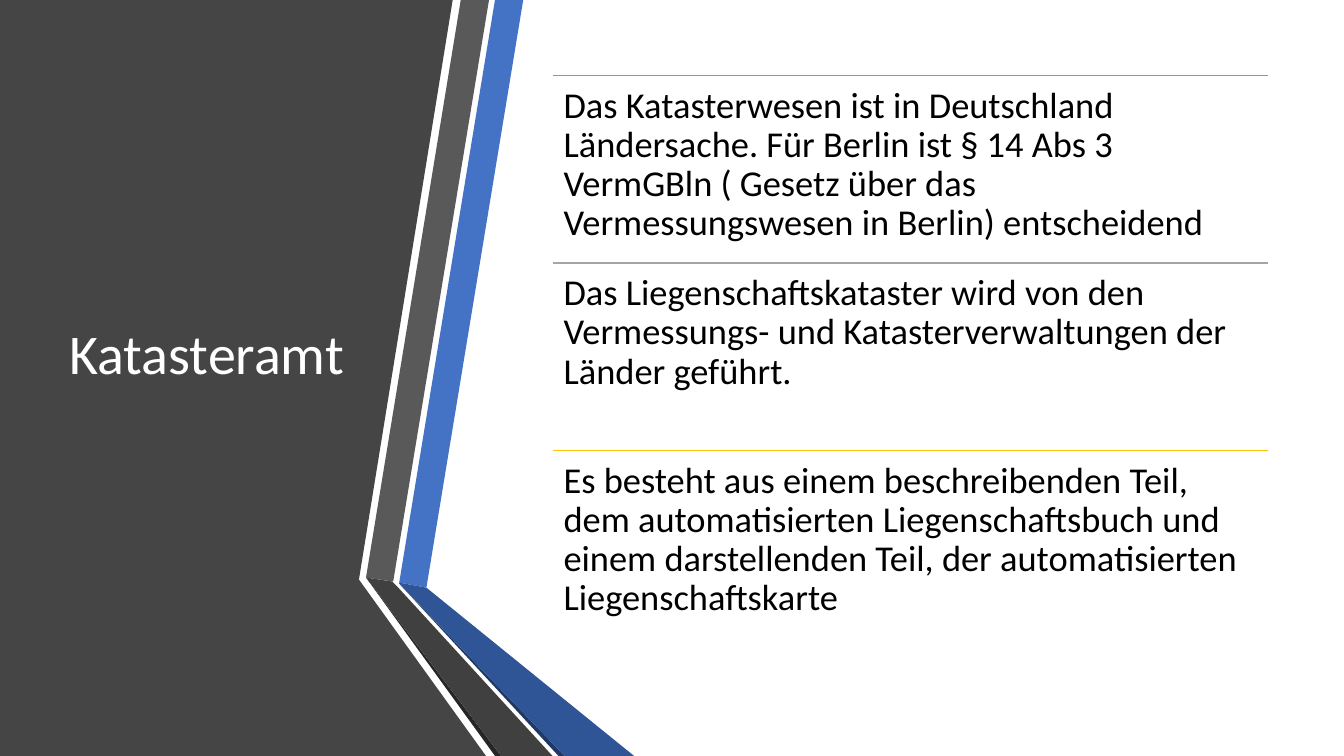
from lxml.etree import SubElement
from pptx import Presentation
from pptx.dml.color import RGBColor
from pptx.enum.shapes import MSO_CONNECTOR
from pptx.enum.text import MSO_ANCHOR
from pptx.oxml.ns import qn
from pptx.util import Inches, Pt

BANDS = [
    ("454545", [(0, 0), (4.49, 0), (3.56, 5.75), (4.82, 7.5), (0, 7.5)]),
    ("4472C4", [(3.96, 5.78), (4.23, 5.83), (5.19, 0), (4.91, 0)]),
    ("595959", [(4.85, 0), (4.57, 0), (3.63, 5.73), (3.9, 5.77)]),
    ("262626", [(3.63, 5.73), (4.91, 7.5), (4.97, 7.5)]),
    ("203864", [(3.96, 5.79), (5.54, 7.5), (5.6, 7.5)]),
    ("2F5597", [(3.96, 5.79), (5.6, 7.5), (6.29, 7.5), (4.23, 5.83),
                (3.96, 5.78)]),
    ("404040", [(5.48, 7.5), (3.95, 5.83), (3.89, 5.77), (3.63, 5.73),
                (4.97, 7.5)]),
]
POINTS = [
    ("ED7D31", "Das Katasterwesen ist in Deutschland Ländersache. "
     "Für Berlin ist § 14 Abs 3 VermGBln ( Gesetz über das "
     "Vermessungswesen in Berlin) entscheidend"),
    ("A5A5A5", "Das Liegenschaftskataster wird von den Vermessungs- und "
     "Katasterverwaltungen der Länder geführt."),
    ("FFC000", "Es besteht aus einem beschreibenden Teil, dem "
     "automatisierten Liegenschaftsbuch und einem darstellenden Teil, "
     "der automatisierten Liegenschaftskarte"),
]
LEFT, TOP, WIDTH, STEP = 5.48, 0.75, 7.1, 1.86


def color(code):
    """Turn a hex string into a colour."""
    return RGBColor.from_string(code)


def apply(item, values):
    """Set each attribute named in a dict."""
    for name, value in values.items():
        setattr(item, name, value)


def add_band(slide, code, points):
    """Draw a filled outline through points in inches."""
    start, *rest = [(Inches(x), Inches(y)) for x, y in points]
    pen = slide.shapes.build_freeform(*start)
    pen.add_line_segments(rest, close=True)
    band = pen.convert_to_shape()
    band.shadow.inherit = False
    band.fill.solid()
    band.fill.fore_color.rgb = color(code)
    band.line.fill.background()


def add_rule(slide, code, top):
    """Draw a thin coloured line above a point."""
    rule = slide.shapes.add_connector(
        MSO_CONNECTOR.STRAIGHT, Inches(LEFT), Inches(top),
        Inches(LEFT + WIDTH), Inches(top))
    rule.line.color.rgb = color(code)
    rule.line.width = Pt(1)
    SubElement(rule._element.spPr, qn("a:effectLst"))


def add_text(slide, text, box, size, code, frame, after=0):
    """Place a wrapped paragraph in a box given in inches."""
    body = slide.shapes.add_textbox(*map(Inches, box)).text_frame
    apply(body, {"word_wrap": True, **frame})
    para = body.paragraphs[0]
    apply(para, {"text": text, "line_spacing": 0.9, "space_after": Pt(after)})
    apply(para.runs[0].font, {"name": "Calibri", "size": Pt(size)})
    para.runs[0].font.color.rgb = color(code)


def main():
    """Build the slide and save it."""
    deck = Presentation()
    apply(deck, {"slide_width": Inches(13.33), "slide_height": Inches(7.5)})
    slide = deck.slides.add_slide(deck.slide_layouts[6])
    for code, points in BANDS:
        add_band(slide, code, points)
    add_text(slide, "Katasteramt", (0.59, TOP, 3.04, 5.58), 40, "FFFFFF",
             {"vertical_anchor": MSO_ANCHOR.MIDDLE})
    sides = ("left", "top", "right", "bottom")
    inset = {f"margin_{side}": Inches(0.11) for side in sides}
    for row, (code, text) in enumerate(POINTS):
        top = TOP + row * STEP
        add_rule(slide, code, top)
        add_text(slide, text, (LEFT, top, WIDTH, STEP), 26, "000000",
                 inset, after=9)
    deck.save("out.pptx")


if __name__ == "__main__":
    main()
